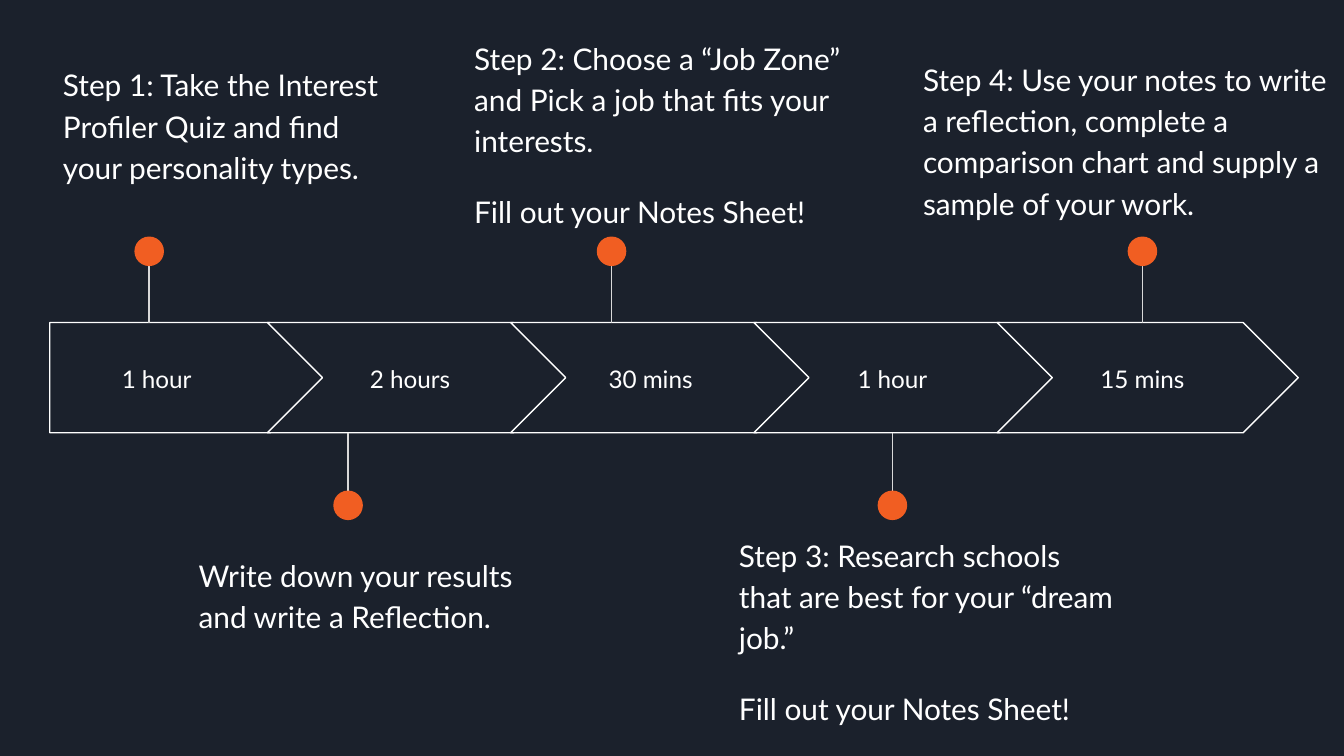
from lxml.etree import SubElement
from pptx import Presentation
from pptx.dml.color import RGBColor
from pptx.enum.shapes import MSO_CONNECTOR, MSO_SHAPE
from pptx.enum.text import MSO_ANCHOR, PP_ALIGN
from pptx.oxml.ns import qn
from pptx.util import Inches, Pt

NAVY = RGBColor(0x1B, 0x21, 0x2C)
WHITE = RGBColor(0xFF, 0xFF, 0xFF)
GREY = RGBColor(0xD9, 0xD9, 0xD9)
ORANGE = RGBColor(0xF1, 0x5E, 0x22)

# The arrow band: one row of stages at an equal pitch
BAND_TOP, BAND_HEIGHT = 2.4, 0.82
BAND_BOTTOM = BAND_TOP + BAND_HEIGHT
CHEVRON_LEFT, CHEVRON_WIDTH, PITCH = 1.99, 2.24, 1.81
PLATE_LEFT, PLATE_WIDTH = 0.37, 2.05
LABEL_TOP, LABEL_HEIGHT = 2.56, 0.51
DOT = 0.22
DOT_ABOVE, DOT_BELOW = 1.76, 3.65

NOTES_SHEET = "Fill out your Notes Sheet!"

# duration, label (left, width), pin x, pin above the band, note box, note
stages = [
    ("1 hour", (0.37, 1.59), 1.11, True, (0.37, 0.36, 2.61, 0.99),
     ["Step 1: Take the Interest Profiler Quiz and find your personality types."]),
    ("2 hours", (2.33, 1.44), 2.59, False, (1.38, 4.01, 2.85, 0.99),
     ["Write down your results and write a Reflection."]),
    ("30 mins", (4.12, 1.44), 4.55, True, (3.43, 0.16, 2.99, 1.24),
     ["Step 2: Choose a “Job Zone” and Pick a job that fits your interests.", NOTES_SHEET]),
    ("1 hour", (5.92, 1.44), 6.64, False, (5.4, 3.86, 2.99, 1.24),
     ["Step 3: Research schools that are best for your “dream job.”", NOTES_SHEET]),
    ("15 mins", (7.78, 1.44), 8.5, True, (6.77, 0.32, 3.23, 1.08),
     ["Step 4: Use your notes to write a reflection, complete a comparison chart "
      "and supply a sample of your work."]),
]

prs = Presentation()
prs.slide_width = Inches(10)
prs.slide_height = prs.slide_width * 9 // 16
slide = prs.slides.add_slide(prs.slide_layouts[6])
slide.background.fill.solid()
slide.background.fill.fore_color.rgb = NAVY


def add_filled(preset, box, color):
    shape = slide.shapes.add_shape(preset, *map(Inches, box))
    shape.shadow.inherit = False
    shape.fill.solid()
    shape.fill.fore_color.rgb = color
    return shape


def add_text(box, paragraphs, size, anchor, paragraph_format):
    frame = slide.shapes.add_textbox(*map(Inches, box)).text_frame
    frame_format = {"word_wrap": True, "vertical_anchor": anchor}
    for side in ("left", "right", "top", "bottom"):
        frame_format[f"margin_{side}"] = Inches(0.1)
    for name, value in frame_format.items():
        setattr(frame, name, value)
    frame.text = "\n".join(paragraphs)
    for index, paragraph in enumerate(frame.paragraphs):
        for name, value in paragraph_format.items():
            setattr(paragraph, name, value)
        if index:
            paragraph.space_before = Pt(16)
        font = paragraph.runs[0].font
        for name, value in {"name": "Lato", "size": Pt(size)}.items():
            setattr(font, name, value)
        font.color.rgb = WHITE


for column, (duration, label, pin_x, above, note_box, note) in enumerate(stages):
    if column == 0:
        preset, left, width = MSO_SHAPE.PENTAGON, PLATE_LEFT, PLATE_WIDTH
    else:
        preset, width = MSO_SHAPE.CHEVRON, CHEVRON_WIDTH
        left = CHEVRON_LEFT + (column - 1) * PITCH
    arrow = add_filled(preset, (left, BAND_TOP, width, BAND_HEIGHT), NAVY)
    arrow.adjustments[0] = 0.5
    arrow.line.color.rgb = WHITE
    arrow.line.width = Pt(0.75)
    add_text((label[0], LABEL_TOP, label[1], LABEL_HEIGHT), [duration], 13,
             MSO_ANCHOR.MIDDLE, {"alignment": PP_ALIGN.CENTER})

    # Each stem starts inside its dot, which covers that end
    if above:
        dot_top, stem_start, stem_end = DOT_ABOVE, 1.8, BAND_TOP
    else:
        dot_top, stem_start, stem_end = DOT_BELOW, 3.82, BAND_BOTTOM
    stem = slide.shapes.add_connector(
        MSO_CONNECTOR.STRAIGHT, Inches(pin_x), Inches(stem_start),
        Inches(pin_x), Inches(stem_end))
    stem.line.color.rgb = GREY
    stem.line.width = Pt(0.75)
    SubElement(stem._element.spPr, qn("a:effectLst"))
    dot = add_filled(MSO_SHAPE.OVAL, (pin_x - DOT / 2, dot_top, DOT, DOT), ORANGE)
    dot.line.fill.background()

    add_text(note_box, note, 16, MSO_ANCHOR.TOP,
             {"alignment": PP_ALIGN.LEFT, "line_spacing": 1.15})

prs.save("out.pptx")
